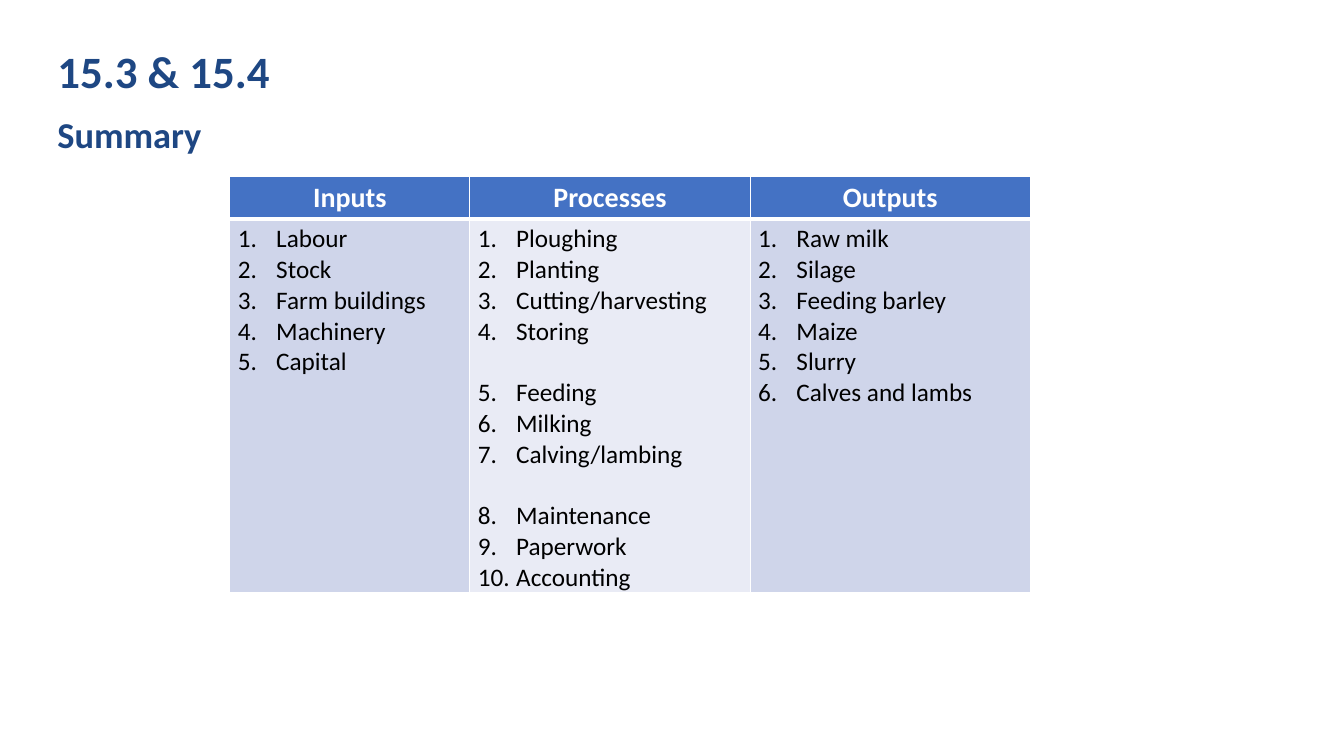
from lxml.etree import SubElement
from pptx import Presentation
from pptx.dml.color import RGBColor
from pptx.enum.text import MSO_ANCHOR, PP_ALIGN
from pptx.oxml.ns import qn
from pptx.util import Inches, Pt

NAVY = RGBColor(0x1E, 0x47, 0x83)
BLUE = RGBColor(0x44, 0x72, 0xC4)
LAVENDER = RGBColor(0xCF, 0xD5, 0xEA)
PALE = RGBColor(0xE9, 0xEB, 0xF5)
WHITE = RGBColor(0xFF, 0xFF, 0xFF)
BLACK = RGBColor(0x00, 0x00, 0x00)
FONT = "Calibri"

COLUMNS = [
    ("Inputs", 2.38, LAVENDER,
     [["Labour", "Stock", "Farm buildings", "Machinery", "Capital"]]),
    ("Processes", 2.78, PALE,
     [["Ploughing", "Planting", "Cutting/harvesting", "Storing"],
      ["Feeding", "Milking", "Calving/lambing"],
      ["Maintenance", "Paperwork", "Accounting"]]),
    ("Outputs", 2.78, LAVENDER,
     [["Raw milk", "Silage", "Feeding barley", "Maize", "Slurry", "Calves and lambs"]]),
]


def add_run(paragraph, text, size, color, bold):
    """Append one formatted run to a paragraph."""
    run = paragraph.add_run()
    run.text = text
    run.font.name = FONT
    run.font.size = Pt(size)
    run.font.bold = bold
    run.font.color.rgb = color


def add_headings(slide, left, top):
    """Place the title and the subtitle below it."""
    title = slide.shapes.title
    title.left, title.top = Inches(left), Inches(top)
    title.width, title.height = Inches(11.5), Inches(0.68)
    title.text_frame.vertical_anchor = MSO_ANCHOR.MIDDLE
    paragraph = title.text_frame.paragraphs[0]
    paragraph.alignment = PP_ALIGN.LEFT
    paragraph.line_spacing = 0.9
    add_run(paragraph, "15.3 & 15.4", 32, NAVY, True)

    subtitle = slide.shapes.add_textbox(
        Inches(left), Inches(top + 0.67), Inches(1.65), Inches(0.54))
    subtitle.text_frame.word_wrap = False
    add_run(subtitle.text_frame.paragraphs[0], "Summary", 26, NAVY, True)


def format_cell(cell, fill, bottom_border, top_margin, bottom_margin):
    """Set the margins, white borders and fill of a cell."""
    cell.margin_left = cell.margin_right = Inches(0.08)
    cell.margin_top, cell.margin_bottom = Inches(top_margin), Inches(bottom_margin)
    properties = cell._tc.get_or_add_tcPr()
    for side, width in (("L", 1), ("R", 1), ("T", 1), ("B", bottom_border)):
        line = SubElement(properties, qn(f"a:ln{side}"), w=str(Pt(width)))
        solid = SubElement(line, qn("a:solidFill"))
        SubElement(solid, qn("a:srgbClr"), val=str(WHITE))
    cell.fill.solid()
    cell.fill.fore_color.rgb = fill


def add_numbered_groups(text_frame, groups):
    """Write groups as one numbered list with a line of space between groups."""
    paragraph = text_frame.paragraphs[0]
    for group_index, group in enumerate(groups):
        for item_index, item in enumerate(group):
            if group_index or item_index:
                paragraph = text_frame.add_paragraph()
            if group_index and not item_index:
                paragraph.space_before = Pt(22)
            properties = paragraph._p.get_or_add_pPr()
            properties.set("marL", str(Inches(0.38)))
            properties.set("indent", str(Inches(-0.38)))
            SubElement(properties, qn("a:buFont"), typeface="+mj-lt")
            SubElement(properties, qn("a:buAutoNum"), type="arabicPeriod")
            add_run(paragraph, item, 18, BLACK, False)


def add_summary_table(slide, left, top, width, height):
    """Place the table of farm inputs, processes and outputs."""
    header_height = 0.42
    table = slide.shapes.add_table(
        2, len(COLUMNS), Inches(left), Inches(top), Inches(width), Inches(height)).table
    table.rows[0].height = Inches(header_height)
    table.rows[1].height = Inches(height - header_height)
    for index, (heading, column_width, fill, groups) in enumerate(COLUMNS):
        table.columns[index].width = Inches(column_width)
        header, body = table.cell(0, index), table.cell(1, index)
        format_cell(header, BLUE, 3, 0.04, 0.04)
        paragraph = header.text_frame.paragraphs[0]
        paragraph.alignment = PP_ALIGN.CENTER
        add_run(paragraph, heading, 20, WHITE, True)
        format_cell(body, fill, 1, 0.05, 0)
        add_numbered_groups(body.text_frame, groups)


def main():
    """Build and save the presentation."""
    presentation = Presentation()
    presentation.slide_width = Inches(13.33)
    presentation.slide_height = Inches(7.5)
    slide = presentation.slides.add_slide(presentation.slide_layouts[5])
    add_headings(slide, 0.47, 0.39)
    add_summary_table(slide, 2.28, 1.75, 7.94, 4.13)
    presentation.save("out.pptx")


if __name__ == "__main__":
    main()
